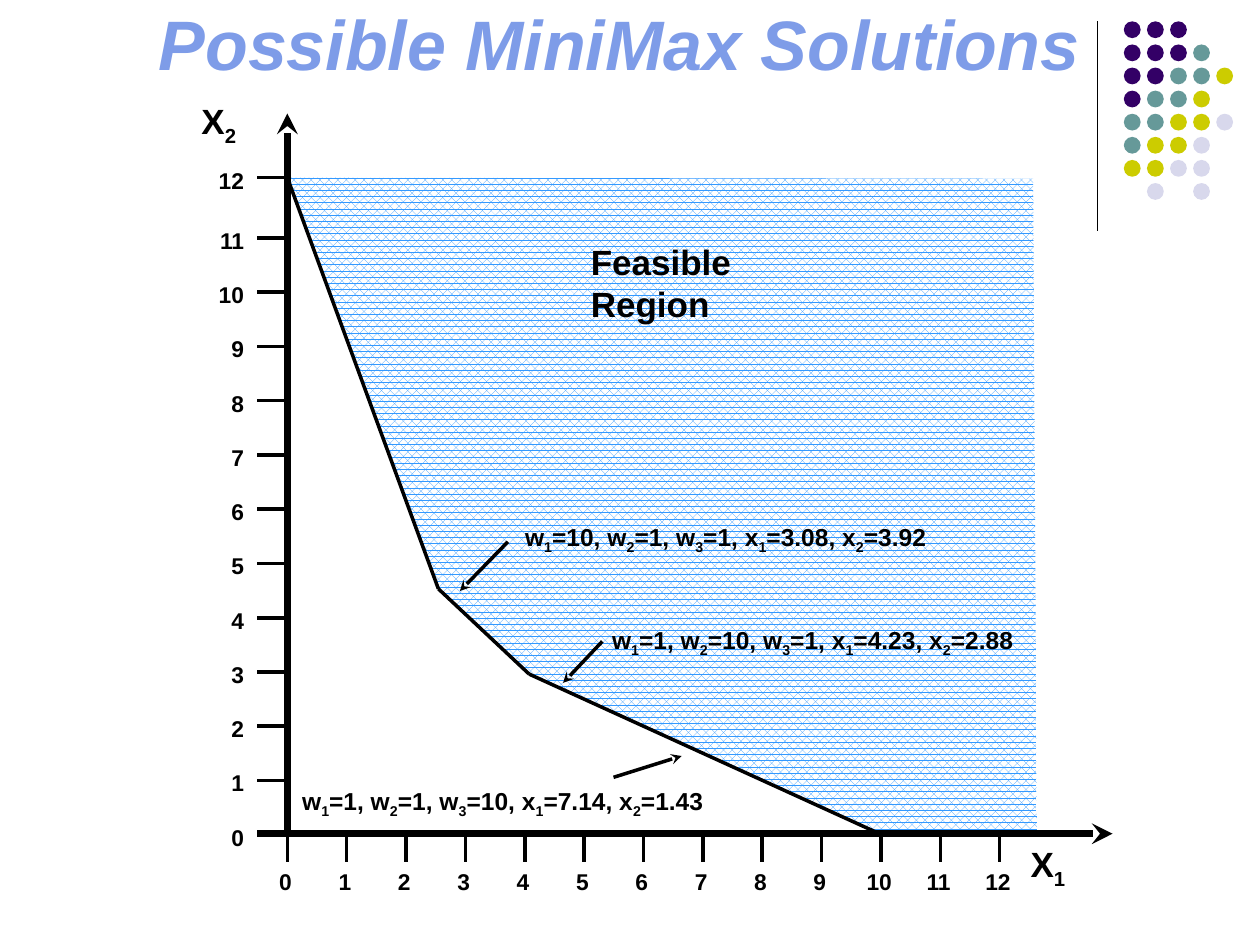
"""Build the slide showing MiniMax solutions on the border of a feasible region."""
from lxml.etree import SubElement
from pptx import Presentation
from pptx.dml.color import RGBColor
from pptx.enum.dml import MSO_PATTERN
from pptx.enum.shapes import MSO_CONNECTOR, MSO_SHAPE
from pptx.enum.text import MSO_ANCHOR, MSO_AUTO_SIZE, PP_ALIGN
from pptx.oxml.ns import qn
from pptx.util import Pt

TITLE = "Possible MiniMax Solutions"
DOT_COLOURS = {"P": "330066", "T": "669999", "Y": "CCCC00", "L": "D8D8EC"}
DOT_ROWS = ["PPP", "PPPT", "PPTTY", "PTTY", "TTYYL", "TYYL", "YYLL", " L L"]
DOT_LEFT, DOT_TOP, DOT_STEP, DOT_SIZE = 642.2, 12.2, 13.2, 9.6

ORIGIN_X, ORIGIN_Y = 164.2, 477
STEP_X, STEP_Y = 33.92, 31
TOP_Y = 101.5
LAST = 12

BORDER = [(164.2, 101.5), (250.5, 336.5), (302.4, 385.2), (503, 476.6)]
REGION = BORDER + [(592.5, 477.3), (590.4, 102.2)]
LABELS = [
    ("X_1", 581.8, 478, 50, 20),
    ("X_2", 108, 53.3, 50, 20),
    ("Feasible Region", 330.5, 133.9, 110, 20),
    ("w_1=10, w_2=1, w_3=1, x_1=3.08, x_2=3.92", 293, 294.5, 255, 14),
    ("w_1=1, w_2=10, w_3=1, x_1=4.23, x_2=2.88", 342.7, 353.5, 255, 14),
    ("w_1=1, w_2=1, w_3=10, x_1=7.14, x_2=1.43", 165.6, 445.7, 255, 14),
]
POINTERS = [
    ((290.2, 309.6), (262.8, 337.7)),
    ((344.2, 366.5), (321.8, 390.2)),
    ((350.6, 444.2), (389.5, 432)),
]


def rgb(value):
    return RGBColor.from_string(value)


def add_line(s, start, end, width=2, arrow=False):
    c = s.shapes.add_connector(MSO_CONNECTOR.STRAIGHT, *map(Pt, start + end))
    c.line.color.rgb = rgb("000000")
    c.line.width = Pt(width)
    if arrow:
        SubElement(c.line._get_or_add_ln(), qn("a:tailEnd"), type="stealth")
    SubElement(c._element.spPr, qn("a:effectLst"))


def style(r, size, colour="000000"):
    r.font.name, r.font.size, r.font.bold = "Arial", Pt(size), True
    r.font.color.rgb = rgb(colour)


def add_label(s, text, left, top, width, size, align=PP_ALIGN.LEFT):
    """Add bold text in which the character after each underscore is a subscript."""
    tf = s.shapes.add_textbox(*map(Pt, (left, top, width, size * 1.7))).text_frame
    tf.word_wrap = True
    p = tf.paragraphs[0]
    p.alignment = align
    first, *rest = text.split("_")
    pieces = [(first, False)]
    for part in rest:
        pieces += [(part[0], True), (part[1:], False)]
    for piece, lowered in pieces:
        if piece:
            r = p.add_run()
            r.text = piece
            style(r, size)
            if lowered:
                r._r.get_or_add_rPr().set("baseline", "-25000")


def add_title(s):
    sp = s.shapes.title
    sp.left, sp.top, sp.width, sp.height = map(Pt, (83.5, 18, 570.2, 32.4))
    tf = sp.text_frame
    tf.text = TITLE
    tf.auto_size = MSO_AUTO_SIZE.NONE
    tf.vertical_anchor = MSO_ANCHOR.BOTTOM
    p = tf.paragraphs[0]
    p.alignment, p.line_spacing = PP_ALIGN.LEFT, 0.7
    style(p.runs[0], 40, "7E9CE8")
    p.runs[0].font.italic = True


def add_dots(s):
    add_line(s, (627.1, 12.2), (627.1, 131.8), 0.75)
    for row, codes in enumerate(DOT_ROWS):
        for col, code in enumerate(codes):
            if code in DOT_COLOURS:
                left, top = DOT_LEFT + col * DOT_STEP, DOT_TOP + row * DOT_STEP
                sp = s.shapes.add_shape(
                    MSO_SHAPE.OVAL, Pt(left), Pt(top), Pt(DOT_SIZE), Pt(DOT_SIZE))
                sp.shadow.inherit = False
                sp.fill.solid()
                sp.fill.fore_color.rgb = rgb(DOT_COLOURS[code])
                sp.line.fill.background()


def add_region(s):
    points = [(Pt(x), Pt(y)) for x, y in REGION]
    builder = s.shapes.build_freeform(*points[0])
    builder.add_line_segments(points[1:], close=True)
    sp = builder.convert_to_shape()
    sp.shadow.inherit = False
    sp.fill.patterned()
    sp.fill.pattern = MSO_PATTERN.PERCENT_70
    sp.fill.fore_color.rgb = rgb("3399FF")
    sp.fill.back_color.rgb = rgb("FFFFFF")
    sp.line.fill.background()
    for start, end in zip(BORDER, BORDER[1:]):
        add_line(s, start, end)


def add_axes(s):
    add_line(s, (ORIGIN_X, ORIGIN_Y), (ORIGIN_X, 64.8), 4, True)
    add_line(s, (146.9, 476.4), (635.8, 476.4), 4, True)
    for n in range(LAST + 1):
        x = ORIGIN_X + n * STEP_X
        y = TOP_Y if n == LAST else ORIGIN_Y - n * STEP_Y
        add_line(s, (x, ORIGIN_Y), (x, 492.5))
        if n:
            add_line(s, (146.9, y), (ORIGIN_X, y))
        add_label(s, str(n), x - 19, 492.5, 36, 13, PP_ALIGN.CENTER)
        add_label(s, str(n), 110.5, y - 10, 36, 13, PP_ALIGN.RIGHT)


def main():
    prs = Presentation()
    prs.slide_width, prs.slide_height = Pt(720), Pt(540)
    s = prs.slides.add_slide(prs.slide_layouts[5])
    add_dots(s)
    add_title(s)
    add_region(s)
    add_axes(s)
    for start, end in POINTERS:
        add_line(s, start, end, arrow=True)
    for label in LABELS:
        add_label(s, *label)
    prs.save("out.pptx")


if __name__ == "__main__":
    main()
